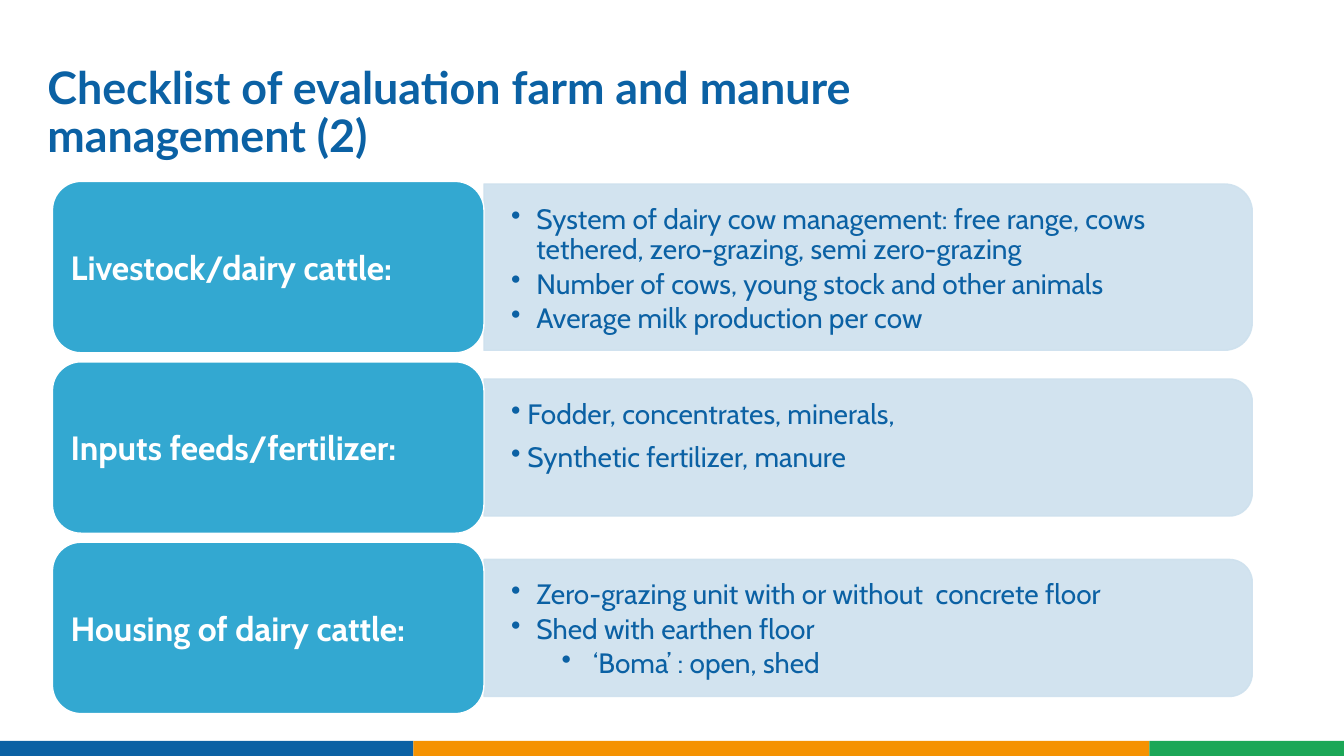
import pptx
import pptx.util
import pptx.dml.color
import pptx.enum.shapes
import pptx.enum.text
import pptx.oxml
import pptx.oxml.ns

Inches = pptx.util.Inches
Pt = pptx.util.Pt
SHAPES = pptx.enum.shapes.MSO_SHAPE
ANCHOR = pptx.enum.text.MSO_ANCHOR
ALIGN = pptx.enum.text.PP_ALIGN

COLORS = {"blue": "0B61A4", "orange": "F59201", "green": "1BA757",
          "label": "33A8D1", "panel": "CEE1EE", "white": "FFFFFF"}


class ChecklistSlide:
    """Holds the style and the current slide."""
    title_font = "Lato"
    body_font = "Cabin"

    def __init__(self, deck):
        self.slide = deck.slides.add_slide(deck.slide_layouts[5])

    def color(self, name):
        return pptx.dml.color.RGBColor.from_string(COLORS[name])

    def run(self, paragraph, text, size, color, font, bold=False):
        run = paragraph.add_run()
        run.text = text
        run.font.size = Pt(size)
        run.font.name = font
        run.font.bold = bold
        run.font.color.rgb = self.color(color)

    def shape(self, kind, left, top, width, height, fill, line=None):
        shape = self.slide.shapes.add_shape(
            kind, Inches(left), Inches(top), Inches(width), Inches(height))
        shape.shadow.inherit = False
        shape.fill.solid()
        shape.fill.fore_color.rgb = self.color(fill)
        if line:
            shape.line.color.rgb = self.color(line)
            shape.line.width = Pt(1)
        else:
            shape.line.fill.background()
        return shape

    def title(self, text, left, top, width, height):
        title = self.slide.shapes.title
        title.left, title.top = Inches(left), Inches(top)
        title.width, title.height = Inches(width), Inches(height)
        frame = title.text_frame
        frame.word_wrap = True
        frame.auto_size = pptx.enum.text.MSO_AUTO_SIZE.NONE
        frame.vertical_anchor = ANCHOR.TOP
        paragraph = frame.paragraphs[0]
        paragraph.alignment = ALIGN.LEFT
        paragraph.line_spacing = 0.9
        self.run(paragraph, text, 32, "blue", self.title_font, bold=True)

    def label(self, text, left, top, width, height):
        label = self.shape(SHAPES.ROUNDED_RECTANGLE, left, top, width, height,
                           "label", "white")
        frame = label.text_frame
        frame.word_wrap = True
        frame.vertical_anchor = ANCHOR.MIDDLE
        paragraph = frame.paragraphs[0]
        paragraph.alignment = ALIGN.LEFT
        self.run(paragraph, text, 24, "white", self.body_font, bold=True)

    def panel(self, left, top, width, height):
        """Panel rounded on its right side: a top-rounded shape turned by 90°."""
        panel = self.shape(SHAPES.ROUND_2_SAME_RECTANGLE,
                           left + (width - height) / 2, top + (height - width) / 2,
                           height, width, "panel", "panel")
        panel.rotation = 90
        for rgb in panel._element.spPr.iter(pptx.oxml.ns.qn("a:srgbClr")):
            alpha = pptx.oxml.parse_xml(
                f'<a:alpha {pptx.oxml.ns.nsdecls("a")} val="90000"/>')
            rgb.append(alpha)

    def bullets(self, items, space_after, left, top, width, height):
        box = self.slide.shapes.add_textbox(
            Inches(left), Inches(top), Inches(width), Inches(height))
        frame = box.text_frame
        frame.word_wrap = True
        frame.margin_left = frame.margin_right = Inches(0.27)
        frame.margin_top = frame.margin_bottom = Inches(0.14)
        for number, (text, margin, indent) in enumerate(items):
            paragraph = frame.add_paragraph() if number else frame.paragraphs[0]
            paragraph.level = 1
            paragraph.line_spacing = 0.9
            paragraph.space_after = Pt(space_after)
            properties = paragraph._p.get_or_add_pPr()
            properties.set("marL", str(Inches(margin)))
            properties.set("indent", str(Inches(indent)))
            properties.append(pptx.oxml.parse_xml(
                f'<a:buChar {pptx.oxml.ns.nsdecls("a")} char="•"/>'))
            self.run(paragraph, text, 20, "blue", self.body_font)


# Each bullet: text, left margin, first-line indent
HANGING = (0.25, -0.25)
NESTED = (0.75, -0.25)
FLUSH = (0, 0)

# Each topic: label, panel height, space after bullets, bullets
TOPICS = [
    ("Livestock/dairy cattle:", 1.65, 3, [
        ("System of dairy cow management: free range, cows tethered, "
         "zero-grazing, semi zero-grazing", *HANGING),
        ("Number of cows, young stock and other animals", *HANGING),
        ("Average milk production per cow", *HANGING)]),
    ("Inputs feeds/fertilizer:", 1.36, 9, [
        (" Fodder, concentrates, minerals,", *FLUSH),
        (" Synthetic fertilizer, manure", *FLUSH)]),
    ("Housing of dairy cattle:", 1.36, 3, [
        ("Zero-grazing unit with or without  concrete floor", *HANGING),
        ("Shed with earthen floor", *HANGING),
        (" ‘Boma’ : open, shed", *NESTED)]),
]
LABEL_LEFT, LABEL_WIDTH, LABEL_HEIGHT = 0.52, 4.28, 1.7
FIRST_TOP, ROW_STEP = 1.8, 1.79
PANEL_LEFT, PANEL_WIDTH = LABEL_LEFT + LABEL_WIDTH, 7.62


def main():
    deck = pptx.Presentation()
    deck.slide_width, deck.slide_height = Inches(13.33), Inches(7.5)
    checklist = ChecklistSlide(deck)

    # Footer stripe
    for color, left, right in [("blue", 0, 4.1), ("orange", 4.1, 11.4),
                               ("green", 11.4, 13.33)]:
        checklist.shape(SHAPES.RECTANGLE, left, 7.35, right - left, 0.15, color)

    checklist.title("Checklist of evaluation farm and manure management (2)",
                    0.37, 0.6, 10.48, 1.54)

    # Topic rows, each panel centred on its label
    for row, (topic, panel_height, space_after, items) in enumerate(TOPICS):
        top = FIRST_TOP + row * ROW_STEP
        panel_top = top + (LABEL_HEIGHT - panel_height) / 2
        checklist.panel(PANEL_LEFT, panel_top, PANEL_WIDTH, panel_height)
        checklist.bullets(items, space_after, PANEL_LEFT, panel_top + 0.07,
                          PANEL_WIDTH - 0.07, panel_height - 0.14)
        checklist.label(topic, LABEL_LEFT, top, LABEL_WIDTH, LABEL_HEIGHT)

    deck.save("out.pptx")


if __name__ == "__main__":
    main()
